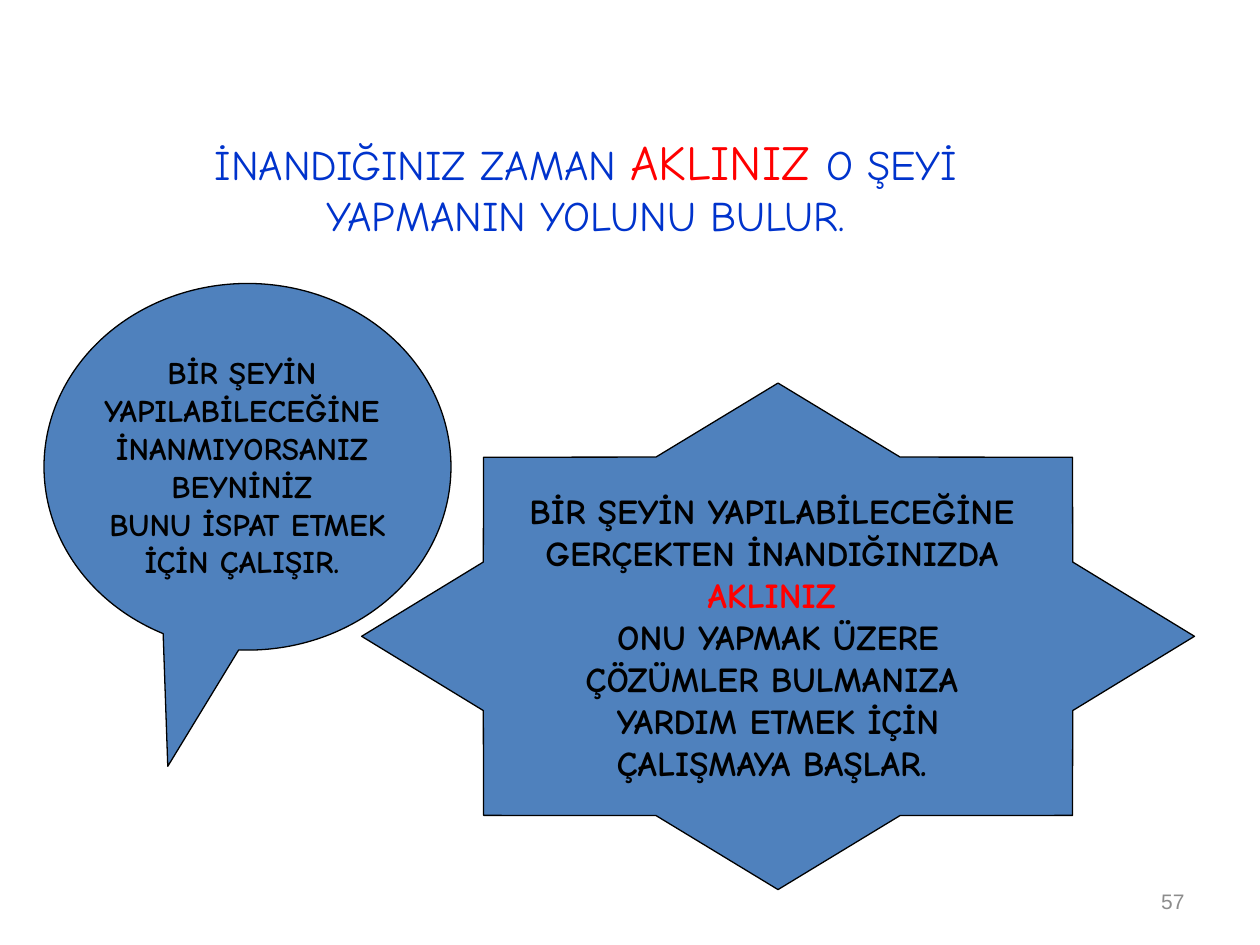
from pptx import Presentation, util as u
from pptx.dml.color import RGBColor
from pptx.enum import shapes, text

BLUE = RGBColor(0x00, 0x33, 0xCC)
RED = RGBColor(0xFF, 0x00, 0x00)
BLACK = RGBColor(0x00, 0x00, 0x00)
GREY = RGBColor(0x8C, 0x8C, 0x8C)
FILL = RGBColor(0x4F, 0x81, 0xBD)
COMIC = "Comic Neue"
CENTER = text.PP_ALIGN.CENTER
MIDDLE = text.MSO_ANCHOR.MIDDLE
KEYWORD = "AKLINIZ "

TITLE = [
    ("İNANDIĞINIZ ZAMAN ", 24, BLUE),
    (KEYWORD, 28, RED),
    ("O ŞEYİ YAPMANIN YOLUNU BULUR.", 24, BLUE),
]
CALLOUTS = [
    dict(
        kind=shapes.MSO_SHAPE.STAR_8_POINT, place=(2.87, 3.04, 6.61, 4.02),
        adjust=[0.383], size=20,
        lines=["BİR ŞEYİN YAPILABİLECEĞİNE ", "GERÇEKTEN İNANDIĞINIZDA ", KEYWORD,
               "ONU YAPMAK ÜZERE", "ÇÖZÜMLER BULMANIZA ", "YARDIM ETMEK İÇİN",
               "ÇALIŞMAYA BAŞLAR. "],
    ),
    dict(
        kind=shapes.MSO_SHAPE.OVAL_CALLOUT, place=(0.35, 2.25, 3.23, 2.91),
        adjust=[-0.196, 0.817], size=18,
        lines=["BİR ŞEYİN ", "YAPILABİLECEĞİNE ", "İNANMIYORSANIZ ", "BEYNİNİZ ",
               "BUNU İSPAT ETMEK", "İÇİN ÇALIŞIR. "],
    ),
]


def inches(place):
    return [u.Inches(value) for value in place]


def write(frame, paragraphs, align, font=COMIC, bold=False):
    """Fill the frame; each paragraph is a list of (words, size, colour)."""
    for index, spans in enumerate(paragraphs):
        para = frame.add_paragraph() if index else frame.paragraphs[0]
        para.alignment = align
        for words, size, colour in spans:
            span = para.add_run()
            span.text = words
            for name, value in dict(name=font, size=u.Pt(size), bold=bold).items():
                setattr(span.font, name, value)
            span.font.color.rgb = colour


def add_title(page):
    title = page.shapes.title
    title.left, title.top, title.width, title.height = inches((0.83, 0.99, 7.64, 0.97))
    frame = title.text_frame
    frame.auto_size = text.MSO_AUTO_SIZE.NONE
    frame.vertical_anchor = text.MSO_ANCHOR.TOP
    write(frame, [TITLE], CENTER)


def add_callout(page, kind, place, adjust, size, lines):
    shape = page.shapes.add_shape(kind, *inches(place))
    for index, value in enumerate(adjust):
        shape.adjustments[index] = value
    shape.shadow.inherit = False
    shape.fill.solid()
    shape.fill.fore_color.rgb = FILL
    shape.line.color.rgb = BLACK
    shape.line.width = u.Pt(0.75)
    frame = shape.text_frame
    frame.word_wrap = False
    frame.vertical_anchor = MIDDLE
    paragraphs = [[(line, size, RED if line == KEYWORD else BLACK)] for line in lines]
    write(frame, paragraphs, CENTER, bold=True)


def add_page_number(page):
    box = page.shapes.add_textbox(*inches((7.17, 6.95, 2.33, 0.4)))
    box.text_frame.word_wrap = True
    box.text_frame.vertical_anchor = MIDDLE
    write(box.text_frame, [[("57", 12, GREY)]], text.PP_ALIGN.RIGHT, font="Arial")


def main():
    deck = Presentation()
    deck.slide_width, deck.slide_height = inches((10, 7.5))
    page = deck.slides.add_slide(deck.slide_layouts.get_by_name("Title Only"))
    add_page_number(page)
    add_title(page)
    for callout in CALLOUTS:
        add_callout(page, **callout)
    deck.save("out.pptx")


if __name__ == "__main__":
    main()
